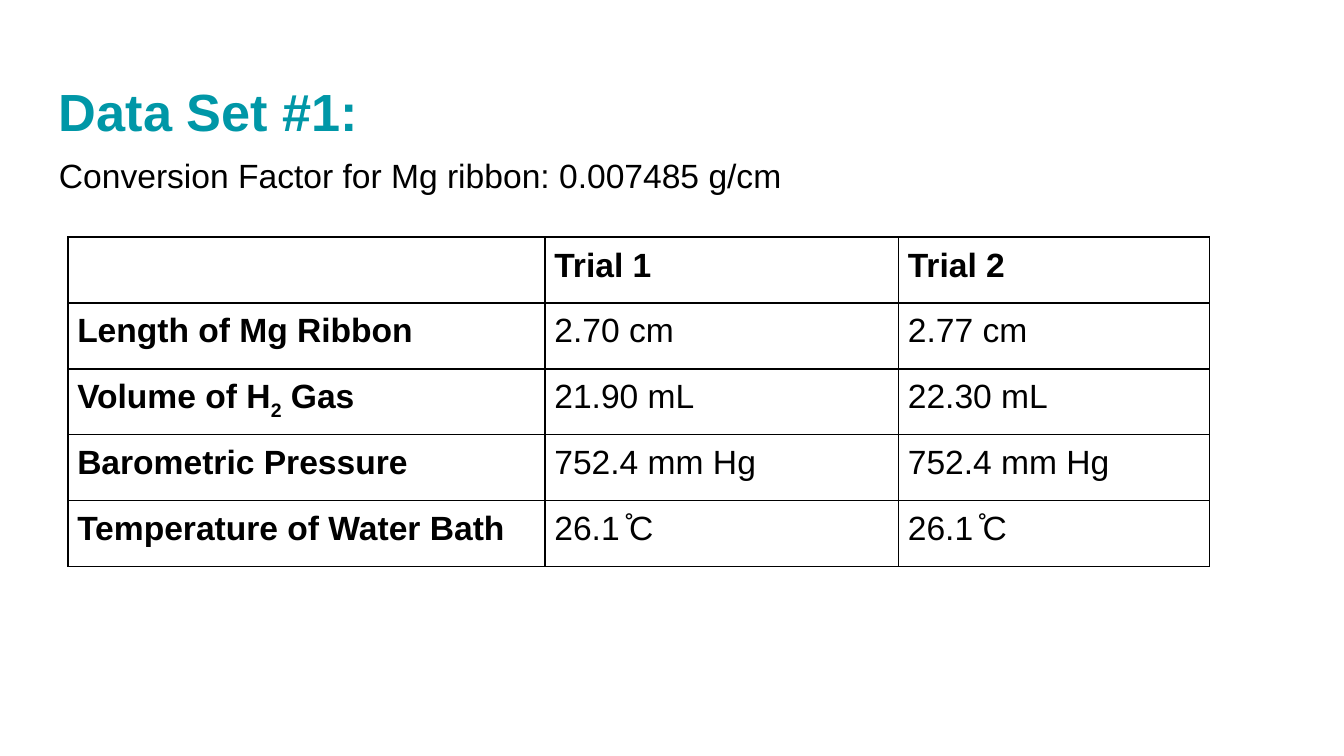
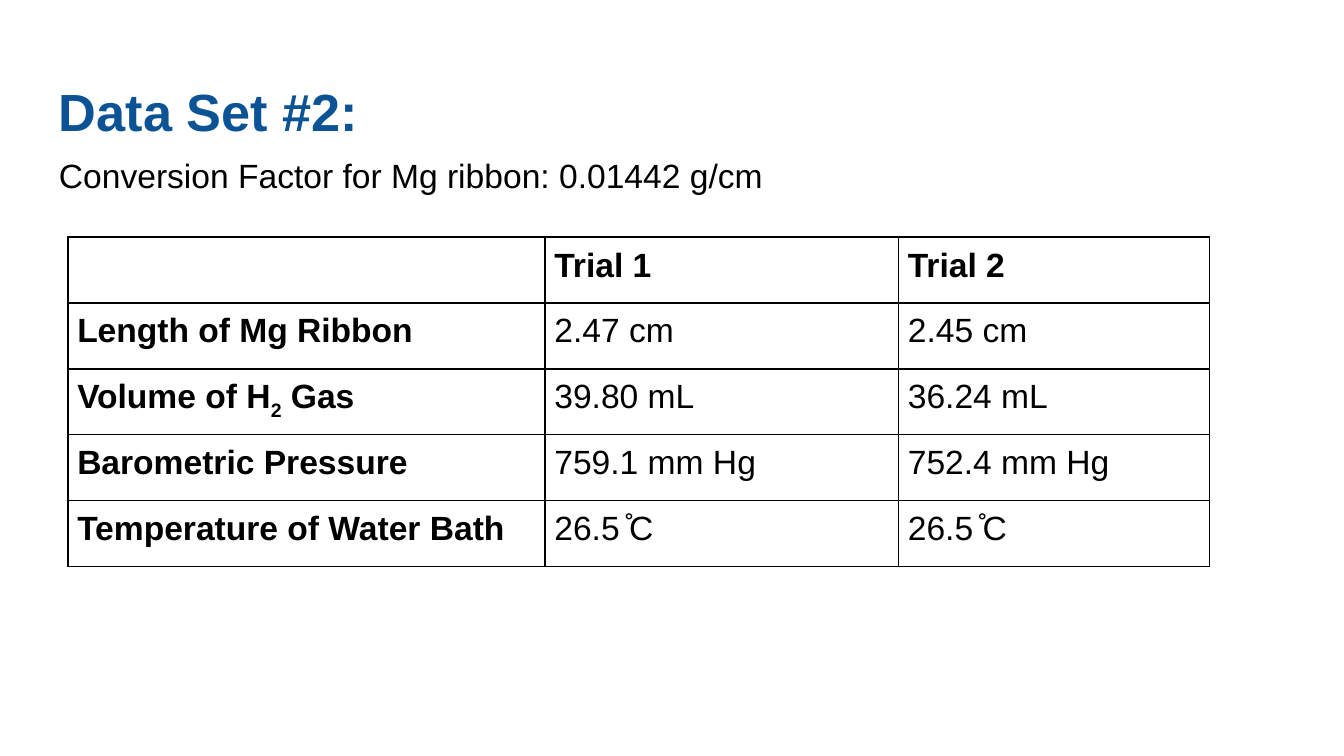
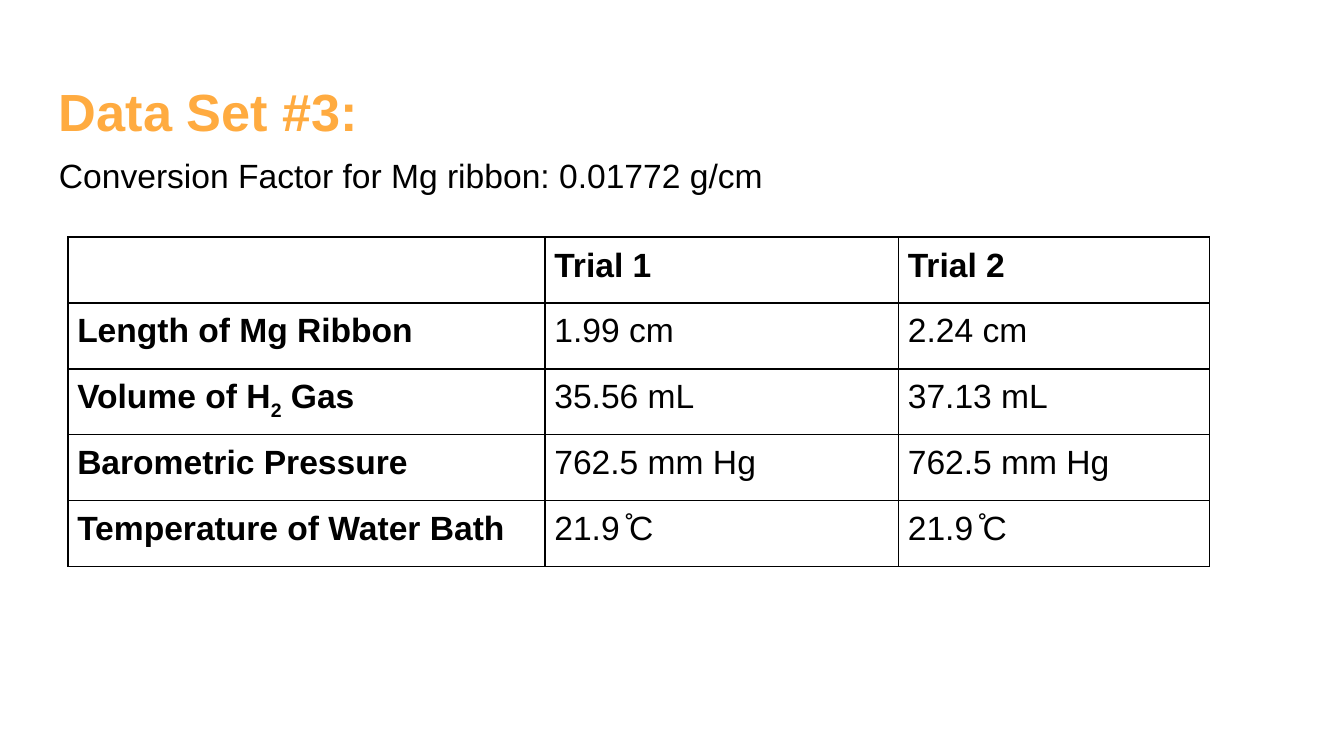
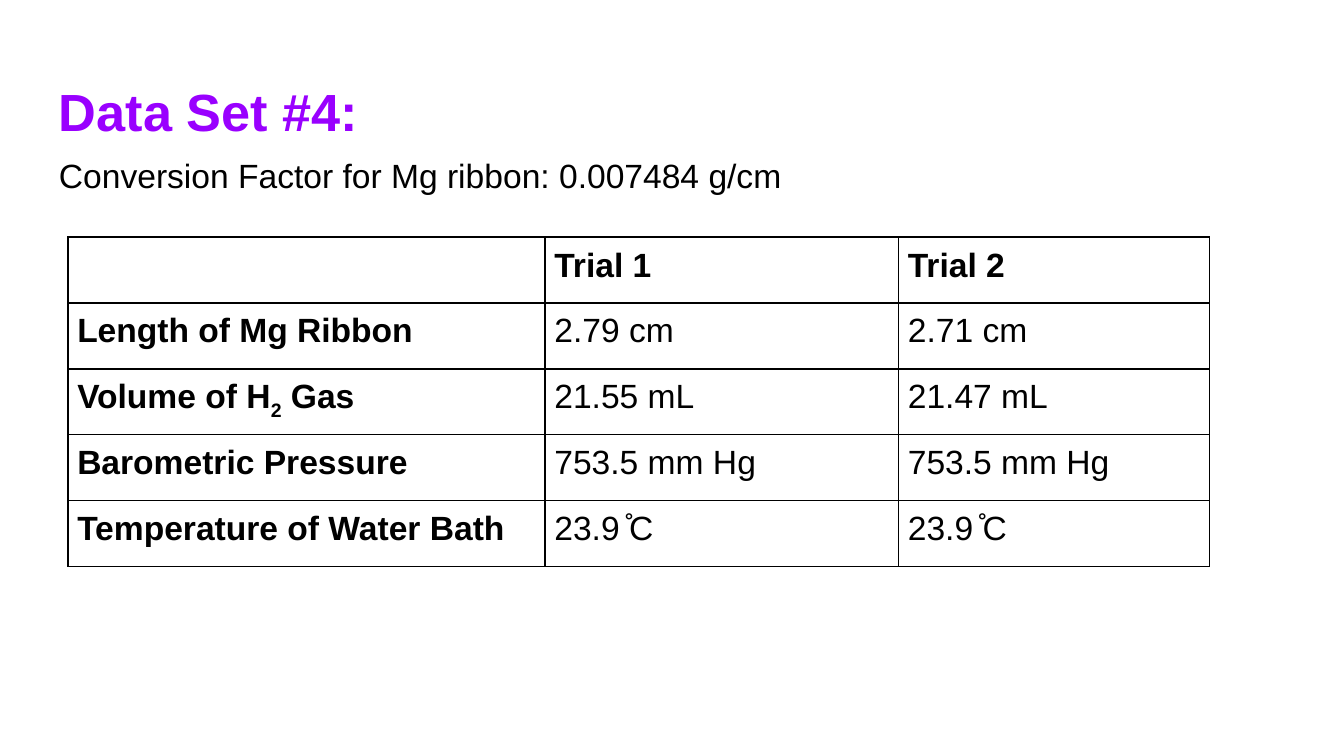
"""Build four slides of magnesium ribbon data sets, one table of trials each."""
from pptx import Presentation
from pptx.dml.color import RGBColor
from pptx.enum.text import MSO_ANCHOR as Anchor
from pptx.oxml.ns import qn
from pptx.util import Emu, Pt
from lxml.etree import SubElement

PX = 4572
SLIDE_SIZE = (2000, 1125)
FONT = "Arial"
COLORS = {
    "text": "000000",
    "teal": "0097A7",
    "blue": "0B5394",
    "orange": "FFAB40",
    "purple": "9900FF",
}
TEXT_LEFT, TEXT_WIDTH, TEXT_HEIGHT = 68, 1864, 126
TITLE_TOP, FACTOR_TOP = 98, 202
TABLE_LEFT, TABLE_TOP = 101, 353
COLUMN_WIDTHS = (710, 526, 463)
ROW_HEIGHT = 98
HEADINGS = ("", "Trial 1", "Trial 2")
MEASURES = (
    ("Length of Mg Ribbon", "cm"),
    ("Volume of H~2~ Gas", "mL"),
    ("Barometric Pressure", "mm Hg"),
    ("Temperature of Water Bath", "̊C"),
)
DATA_SETS = (
    ("teal", "0.007485", (("2.70", "2.77"), ("21.90", "22.30"), ("752.4", "752.4"), ("26.1", "26.1"))),
    ("blue", "0.01442", (("2.47", "2.45"), ("39.80", "36.24"), ("759.1", "752.4"), ("26.5", "26.5"))),
    ("orange", "0.01772", (("1.99", "2.24"), ("35.56", "37.13"), ("762.5", "762.5"), ("21.9", "21.9"))),
    ("purple", "0.007484", (("2.79", "2.71"), ("21.55", "21.47"), ("753.5", "753.5"), ("23.9", "23.9"))),
)


def px(*lengths):
    """Turn px lengths into EMU."""
    return [Emu(length * PX) for length in lengths]


def set_margins(frame, margin):
    """Give a text frame or cell the same margin on all sides."""
    frame.margin_left, frame.margin_top, frame.margin_right, frame.margin_bottom = px(*[margin] * 4)


def write(frame, text, size=18, color="text", bold=False, line_spacing=None):
    """Fill the first paragraph, with text between tildes as subscript."""
    paragraph = frame.paragraphs[0]
    paragraph.font.size = Pt(size)
    if line_spacing:
        paragraph.line_spacing = line_spacing
    for index, part in enumerate(text.split("~") if text else ()):
        run = paragraph.add_run()
        run.text = part
        font = run.font
        font.name, font.size, font.bold = FONT, Pt(size), bold
        font.color.rgb = RGBColor.from_string(COLORS[color])
        if index % 2:
            font._element.set("baseline", "-25000")


def add_text(slide, top, text, **text_format):
    """Add a full-width line of text."""
    box = slide.shapes.add_textbox(*px(TEXT_LEFT, top, TEXT_WIDTH, TEXT_HEIGHT))
    frame = box.text_frame
    frame.word_wrap = True
    frame.vertical_anchor = Anchor.TOP
    set_margins(frame, 20)
    write(frame, text, **text_format)


def add_borders(cell):
    """Draw a one-point line on each side of a cell."""
    properties = cell._tc.get_or_add_tcPr()
    for side in ("lnL", "lnR", "lnT", "lnB"):
        line = SubElement(properties, qn(f"a:{side}"), w=str(Pt(1)))
        fill = SubElement(line, qn("a:solidFill"))
        SubElement(fill, qn("a:srgbClr"), val=COLORS["text"])


def add_trial_table(slide, rows):
    """Add a table with bold headings and measure names."""
    size = px(sum(COLUMN_WIDTHS), ROW_HEIGHT * len(rows))
    table = slide.shapes.add_table(
        len(rows), len(COLUMN_WIDTHS), *px(TABLE_LEFT, TABLE_TOP), *size
    ).table
    table.first_row = table.horz_banding = False
    for column, width in zip(table.columns, px(*COLUMN_WIDTHS)):
        column.width = width
    for row_index, row in enumerate(rows):
        for column_index, text in enumerate(row):
            cell = table.cell(row_index, column_index)
            set_margins(cell, 14)
            add_borders(cell)
            cell.fill.background()
            write(cell.text_frame, text, bold=row_index == 0 or column_index == 0)


def add_data_set(presentation, number, color, factor, readings):
    """Add the slide of one data set."""
    slide = presentation.slides.add_slide(presentation.slide_layouts[6])
    add_text(slide, TITLE_TOP, f"Data Set #{number}:", size=28, color=color, bold=True)
    add_text(slide, FACTOR_TOP, f"Conversion Factor for Mg ribbon: {factor} g/cm", line_spacing=1.15)
    rows = [HEADINGS]
    for (measure, unit), trials in zip(MEASURES, readings):
        rows.append((measure, *(f"{value} {unit}" for value in trials)))
    add_trial_table(slide, rows)


def main():
    """Build and save the presentation."""
    presentation = Presentation()
    presentation.slide_width, presentation.slide_height = px(*SLIDE_SIZE)
    for number, data_set in enumerate(DATA_SETS, start=1):
        add_data_set(presentation, number, *data_set)
    presentation.save("out.pptx")


if __name__ == "__main__":
    main()
